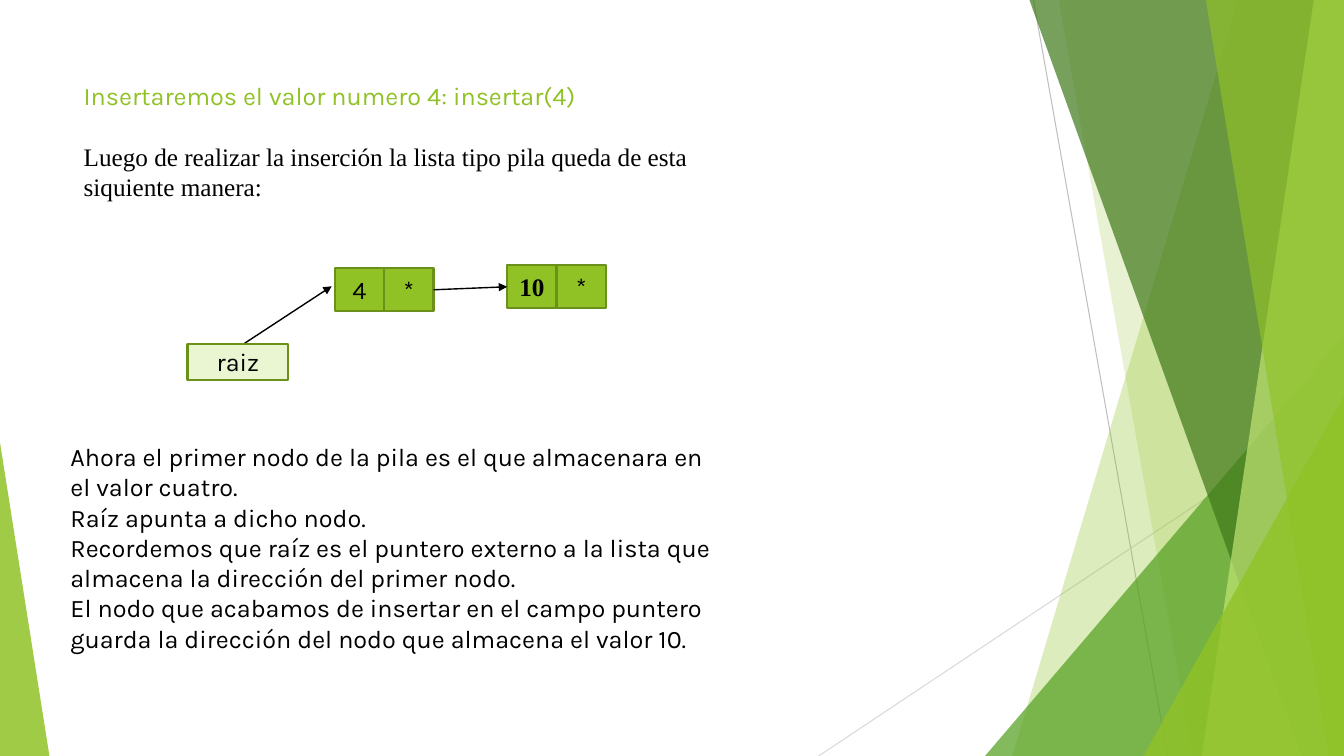
from lxml import etree
from pptx import Presentation
from pptx.dml.color import RGBColor
from pptx.enum.shapes import MSO_CONNECTOR, MSO_SHAPE
from pptx.enum.text import MSO_ANCHOR, MSO_AUTO_SIZE, PP_ALIGN
from pptx.oxml.ns import qn
from pptx.util import Inches, Pt

RECT = MSO_SHAPE.RECTANGLE
TRIANGLE = MSO_SHAPE.ISOSCELES_TRIANGLE
STRAIGHT = MSO_CONNECTOR.STRAIGHT
TOP, MIDDLE = MSO_ANCHOR.TOP, MSO_ANCHOR.MIDDLE
LEFT, CENTER = PP_ALIGN.LEFT, PP_ALIGN.CENTER
NO_FIT, GROW = MSO_AUTO_SIZE.NONE, MSO_AUTO_SIZE.SHAPE_TO_FIT_TEXT

BLACK = RGBColor(0x00, 0x00, 0x00)
LIME = RGBColor(0x90, 0xC2, 0x26)
GREEN = RGBColor(0x54, 0xA0, 0x21)
FOREST = RGBColor(0x3F, 0x78, 0x19)
PALE = RGBColor(0xC0, 0xE4, 0x74)
MINT = RGBColor(0xEA, 0xF6, 0xD1)
OLIVE = RGBColor(0x6B, 0x90, 0x1C)
GRAY = RGBColor(0xBF, 0xBF, 0xBF)
SILVER = RGBColor(0xD9, 0xD9, 0xD9)

WIDE, HIGH = 13.33, 7.5
SANS = {"name": "Karla", "size": Pt(18), "bold": False}
SERIF = {**SANS, "name": "Times New Roman"}
STRONG = {**SERIF, "bold": True}

# top x, bottom x, colour, opacity
BACK = [(12.28, 10.04, LIME, 30), (10.5, 11.83, LIME, 20)]
FRONT = [(10.21, 12.91, FOREST, 70), (13.03, 11.92, PALE, 70),
         (11.96, 13.18, LIME, 65)]

TITLE = [
    ("Insertaremos el valor numero 4: insertar(4)", SANS, LIME, 0),
    ("Luego de realizar la inserción la lista tipo pila queda de "
     "esta siquiente manera:", SERIF, BLACK, 21.5),
]
NOTES = [
    "Ahora el primer nodo de la pila es el que almacenara en el valor cuatro.",
    "Raíz apunta a dicho nodo.",
    "Recordemos que raíz es el puntero externo a la lista que almacena "
    "la dirección del primer nodo.",
    "El nodo que acabamos de insertar en el campo puntero guarda la "
    "dirección del nodo que almacena el valor 10.",
]


def apply(target, values):
    for name, value in values.items():
        setattr(target, name, value)


def write(para, text, font, color=BLACK):
    run = para.add_run()
    run.text = text
    apply(run.font, font)
    run.font.color.rgb = color


def get_para(frame, i):
    """First paragraph of the frame, or a new one after it."""
    return frame.add_paragraph() if i else frame.paragraphs[0]


def tint(shape, color, alpha):
    """Fill without outline, at the given opacity in percent."""
    shape.shadow.inherit = False
    shape.fill.solid()
    shape.fill.fore_color.rgb = color
    shape.line.fill.background()
    node = shape.element.spPr.find(qn("a:solidFill"))[0]
    etree.SubElement(node, qn("a:alpha")).set("val", str(alpha * 1000))


def add_band(slide, top, base, color, alpha):
    """Band from a slanted left side to the right edge of the slide."""
    pen = slide.shapes.build_freeform(Inches(top), 0)
    pen.add_line_segments([(Inches(x), Inches(y)) for x, y in (
        (WIDE, 0), (WIDE, HIGH), (base, HIGH))])
    tint(pen.convert_to_shape(), color, alpha)


def add_wedge(slide, left, top, width, tip, color, alpha):
    """Triangle standing on the bottom edge of the slide."""
    shape = slide.shapes.add_shape(
        TRIANGLE, Inches(left), Inches(top), Inches(width), Inches(HIGH - top))
    shape.adjustments[0] = tip
    tint(shape, color, alpha)


def add_line(slide, start, end, color, width, arrow=False):
    line = slide.shapes.add_connector(
        STRAIGHT, *[Inches(v) for v in (*start, *end)])
    line.line.color.rgb = color
    line.line.width = Pt(width)
    props = line.element.spPr
    if arrow:
        tail = etree.SubElement(props.find(qn("a:ln")), qn("a:tailEnd"))
        tail.set("type", "triangle")
    etree.SubElement(props, qn("a:effectLst"))
    return line


def add_box(slide, text, left, top, width, height, fill=LIME, font=SANS):
    box = slide.shapes.add_shape(
        RECT, *[Inches(v) for v in (left, top, width, height)])
    box.shadow.inherit = False
    box.fill.solid()
    box.fill.fore_color.rgb = fill
    box.line.color.rgb = OLIVE
    box.line.width = Pt(1.5)
    apply(box.text_frame, {"word_wrap": True, "vertical_anchor": MIDDLE})
    para = box.text_frame.paragraphs[0]
    para.alignment = CENTER
    write(para, text, font)
    return box


def add_node(slide, value, left, top, font=SANS):
    """Value cell and pointer cell, side by side."""
    size = 0.49
    return [add_box(slide, text, left + i * size, top, size, 0.43, font=face)
            for i, (text, face) in enumerate([(value, font), ("*", SANS)])]


def add_decor(slide):
    add_line(slide, (10.25, 0), (11.58, HIGH), GRAY, 0.75)
    add_line(slide, (WIDE, 4.03), (8.12, HIGH), SILVER, 0.75)
    for band in BACK:
        add_band(slide, *band)
    add_wedge(slide, 9.77, 3.33, 3.56, 1, GREEN, 72)
    for band in FRONT:
        add_band(slide, *band)
    add_wedge(slide, 11.34, 3.93, 1.99, 1, LIME, 80)
    add_wedge(slide, 0, 4.39, 0.49, 0, LIME, 85)


def set_title(slide):
    title = slide.shapes.title
    apply(title, {"left": Inches(0.73), "top": Inches(0.75),
                  "width": Inches(6.41), "height": Inches(1.87)})
    frame = title.text_frame
    apply(frame, {"word_wrap": True, "vertical_anchor": TOP,
                  "auto_size": NO_FIT})
    for i, (text, font, color, gap) in enumerate(TITLE):
        para = get_para(frame, i)
        apply(para, {"alignment": LEFT, "space_before": Pt(gap)})
        write(para, text, font, color)


def add_notes(slide):
    box = slide.shapes.add_textbox(
        Inches(0.6), Inches(4.33), Inches(6.67), Inches(2.22))
    frame = box.text_frame
    apply(frame, {"word_wrap": True, "auto_size": GROW})
    for i, text in enumerate(NOTES):
        write(get_para(frame, i), text, SANS)


def main():
    deck = Presentation()
    deck.slide_width, deck.slide_height = Inches(WIDE), Inches(HIGH)
    slide = deck.slides.add_slide(deck.slide_layouts[5])
    add_decor(slide)
    set_title(slide)
    ten = add_node(slide, "10", 5.03, 2.63, STRONG)
    four = add_node(slide, "4", 3.32, 2.66)
    add_line(slide, (2.42, 3.41), (3.29, 2.84), BLACK, 1, arrow=True)
    link = add_line(slide, (4.3, 2.88), (5.03, 2.85), BLACK, 1, arrow=True)
    link.begin_connect(four[1], 3)
    link.end_connect(ten[0], 1)
    add_box(slide, "raiz", 1.86, 3.41, 1, 0.36, MINT)
    add_notes(slide)
    deck.save("out.pptx")


if __name__ == "__main__":
    main()
